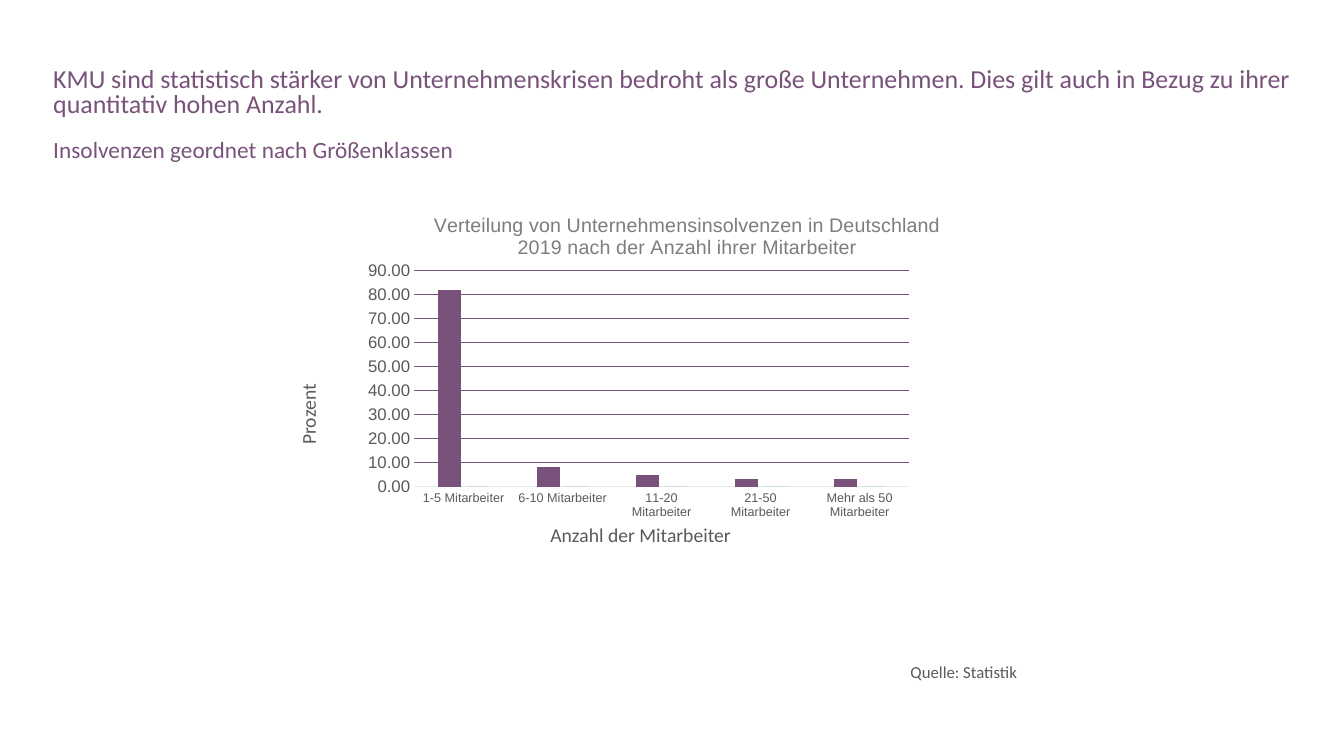
from lxml.etree import SubElement
from pptx import Presentation
from pptx.chart.data import CategoryChartData
from pptx.dml.color import RGBColor
from pptx.enum.chart import XL_CHART_TYPE, XL_TICK_MARK
from pptx.oxml.ns import qn
from pptx.util import Inches, Pt

PLUM = RGBColor(0x79, 0x52, 0x7B)
TEAL = RGBColor(0x0D, 0x93, 0x90)
DARK = RGBColor(0x59, 0x5A, 0x59)
GREY = RGBColor(0x7C, 0x7D, 0x7C)
PALE = RGBColor(0xE8, 0xE8, 0xE8)
DEEP = RGBColor(0x08, 0x6D, 0x6E)

WIDE, HIGH = 13.33, 7.5
LEFT, SPAN = 0.43, 12.54
TEXTS = [
    ("KMU sind statistisch stärker von Unternehmenskrisen bedroht als große "
     "Unternehmen. Dies gilt auch in Bezug zu ihrer quantitativ hohen Anzahl.",
     dict(box=(LEFT, 0.63, SPAN, 0.64), size=18.5, color=PLUM, lead=0.8)),
    ("Insolvenzen geordnet nach Größenklassen",
     dict(box=(LEFT, 1.35, SPAN, 0.33), size=16.65, color=PLUM, lead=0.8)),
    ("Quelle: Statistik",
     dict(box=(8.94, 6.47, 1.85, 0.34), size=12, lead=1.25, pad=(0.09, 0.04))),
    ("Prozent", dict(box=(2.47, 3.75, 1.18, 0.34), turn=270)),
    ("Anzahl der Mitarbeiter", dict(box=(5.36, 5.14, 2.67, 0.81))),
]
HEAD = ("Verteilung von Unternehmensinsolvenzen in Deutschland 2019 "
        "nach der Anzahl ihrer Mitarbeiter")
CLASSES = ["1-5 Mitarbeiter", "6-10 Mitarbeiter", "11-20 Mitarbeiter",
           "21-50 Mitarbeiter", "Mehr als 50 Mitarbeiter"]
SERIES = [("Series 1", (82, 8, 5, 3, 3), PLUM),
          ("Series 2", (0, 0, 0, 0, 0), TEAL)]
FRAME = (3.5, 2.07, 6.4, 4.27)
PLOT = dict(x=0.095, y=0.144, w=0.767, h=0.502)
SPOT = dict(x=0.12, y=0)


def style(font, size, color, face="Arial"):
    font.size, font.name, font.bold = Pt(size), face, False
    font.color.rgb = color


def write(slide, text, box, size=14, color=DARK, lead=1, pad=(0.1, 0.05), turn=0):
    shape = slide.shapes.add_textbox(*map(Inches, box))
    shape.rotation = turn
    frame = shape.text_frame
    frame.word_wrap = True
    frame.margin_left = frame.margin_right = Inches(pad[0])
    frame.margin_top = frame.margin_bottom = Inches(pad[1])
    para = frame.paragraphs[0]
    para.line_spacing = lead
    run = para.add_run()
    run.text = text
    style(run.font, size, color, "Calibri")


def place(node, index, spot, inner=False):
    for old in node.findall(qn("c:layout")):
        node.remove(old)
    layout = SubElement(node, qn("c:layout"))
    node.insert(index, layout)
    manual = SubElement(layout, qn("c:manualLayout"))
    if inner:
        SubElement(manual, qn("c:layoutTarget")).set("val", "inner")
    for key in "xy":
        SubElement(manual, qn(f"c:{key}Mode")).set("val", "edge")
    for key, share in spot.items():
        SubElement(manual, qn(f"c:{key}")).set("val", str(share))


def draw(slide):
    data = CategoryChartData()
    data.categories = CLASSES
    for name, vals, _ in SERIES:
        data.add_series(name, vals)
    chart = slide.shapes.add_chart(
        XL_CHART_TYPE.COLUMN_CLUSTERED, *map(Inches, FRAME), data).chart
    style(chart.font, 10, DEEP)
    chart.has_legend = False

    chart.has_title = True
    title = chart.chart_title
    run = title.text_frame.paragraphs[0].add_run()
    run.text = HEAD
    style(run.font, 14, GREY)
    title.include_in_layout = False
    place(title._element, 1, SPOT)
    place(chart._chartSpace.chart.plotArea, 0, PLOT, inner=True)

    plot = chart.plots[0]
    plot.gap_width, plot.overlap = 219, -27
    plot.vary_by_categories = False
    for bars, (_, _, color) in zip(plot.series, SERIES):
        bars.format.fill.solid()
        bars.format.fill.fore_color.rgb = color

    cat, val = chart.category_axis, chart.value_axis
    for axis, size in ((cat, 9), (val, 12)):
        axis.major_tick_mark = axis.minor_tick_mark = XL_TICK_MARK.NONE
        style(axis.tick_labels.font, size, DARK)
    val.minimum_scale, val.maximum_scale, val.major_unit = 0, 90, 10
    val.tick_labels.number_format = "#,##0.00"
    val.tick_labels.number_format_is_linked = False
    val.has_major_gridlines = True
    val.format.line.fill.background()
    for line, color in ((cat.format.line, PALE),
                        (val.major_gridlines.format.line, PLUM)):
        line.color.rgb = color
        line.width = Pt(0.75)


def main():
    """Build the slide on company insolvencies by size class."""
    deck = Presentation()
    deck.slide_width, deck.slide_height = Inches(WIDE), Inches(HIGH)
    slide = deck.slides.add_slide(deck.slide_layouts[6])
    for text, form in TEXTS:
        write(slide, text, **form)
    draw(slide)
    deck.save("out.pptx")


if __name__ == "__main__":
    main()
